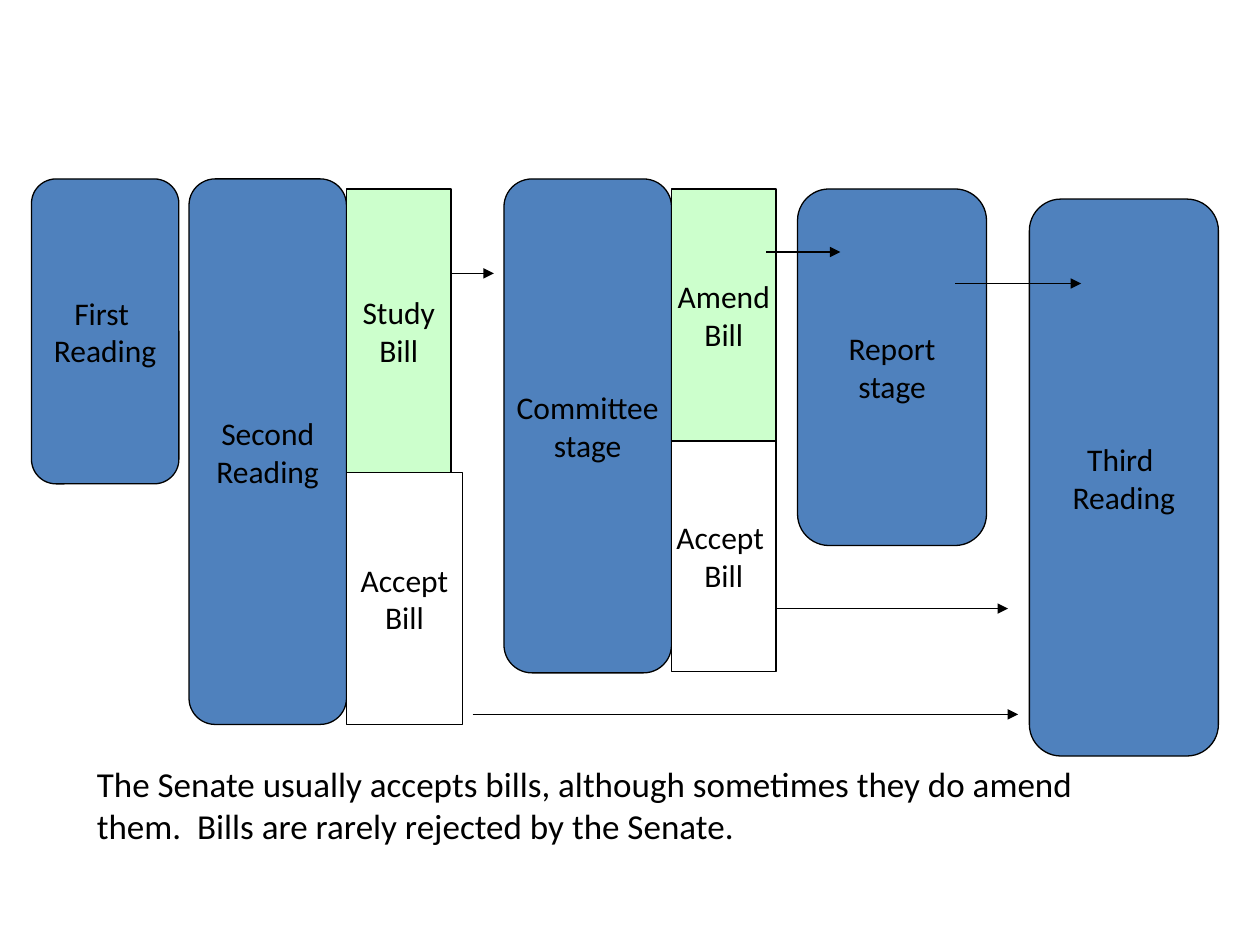
from pptx import Presentation
from pptx.dml.color import RGBColor
from pptx.enum import shapes, text
from pptx.oxml.ns import qn
from pptx.util import Inches, Pt
from lxml import etree

COLORS = {"stage": "4F81BD", "change": "CCFFCC", "accept": "FFFFFF", "ink": "000000"}
FONT = "Calibri"

# Kind, wording, left, top, width, height in inches
STEPS = [
    ("stage", "First \nReading", 0.25, 1.42, 1.17, 2.42),
    ("stage", "Second\nReading", 1.5, 1.42, 1.25, 4.33),
    ("change", "Study\nBill", 2.75, 1.5, 0.83, 2.25),
    ("accept", "Accept\nBill", 2.75, 3.75, 0.92, 2),
    ("stage", "Committee\nstage", 4, 1.42, 1.33, 3.92),
    ("change", "Amend\nBill", 5.33, 1.5, 0.83, 2),
    ("accept", "Accept \nBill", 5.33, 3.5, 0.83, 1.83),
    ("stage", "Report\nstage", 6.33, 1.5, 1.5, 2.83),
    ("stage", "Third \nReading", 8.17, 1.58, 1.5, 4.42),
]

# Level arrows: start x, end x, y
ARROWS = [
    (3.75, 8.08, 5.67),
    (6.17, 8, 4.83),
    (3.58, 3.92, 2.17),
    (6.08, 6.67, 2),
    (7.58, 8.58, 2.25),
]

NOTE = ("The Senate usually accepts bills, although sometimes they do amend them.  "
        "Bills are rarely rejected by the Senate.")


def color(name):
    return RGBColor.from_string(COLORS[name])


def style_text(frame, size, alignment):
    for para in frame.paragraphs:
        para.alignment = alignment
        for span in para.runs:
            span.font.size = Pt(size)
            span.font.name = FONT
            span.font.color.rgb = color("ink")


def style_line(line):
    line.color.rgb = color("ink")
    line.width = Pt(0.75)


def add_step(page, kind, wording, *place):
    preset = shapes.MSO_SHAPE
    outline = (preset.FLOWCHART_ALTERNATE_PROCESS if kind == "stage"
               else preset.FLOWCHART_PROCESS)
    box = page.shapes.add_shape(outline, *map(Inches, place))
    box.shadow.inherit = False
    box.fill.solid()
    box.fill.fore_color.rgb = color(kind)
    style_line(box.line)
    frame = box.text_frame
    frame.text = wording
    frame.word_wrap = False
    frame.vertical_anchor = text.MSO_ANCHOR.MIDDLE
    style_text(frame, 18, text.PP_ALIGN.CENTER)


def add_arrow(page, start, end, y):
    arrow = page.shapes.add_connector(
        shapes.MSO_CONNECTOR.STRAIGHT, Inches(start), Inches(y), Inches(end), Inches(y))
    style_line(arrow.line)
    etree.SubElement(arrow.line._get_or_add_ln(), qn("a:tailEnd"), type="triangle")
    etree.SubElement(arrow._element.spPr, qn("a:effectLst"))


def main():
    deck = Presentation()
    deck.slide_width, deck.slide_height = Inches(10), Inches(7.5)
    page = deck.slides.add_slide(deck.slide_layouts[6])

    # Stages of a bill and their outcomes
    for step in STEPS:
        add_step(page, *step)

    # Routes between stages
    for arrow in ARROWS:
        add_arrow(page, *arrow)

    # Closing note
    note = page.shapes.add_textbox(Inches(0.67), Inches(6), Inches(8.08), Inches(0.77))
    note.text_frame.word_wrap = True
    note.text_frame.text = NOTE
    style_text(note.text_frame, 20, text.PP_ALIGN.LEFT)

    deck.save("out.pptx")


if __name__ == "__main__":
    main()
